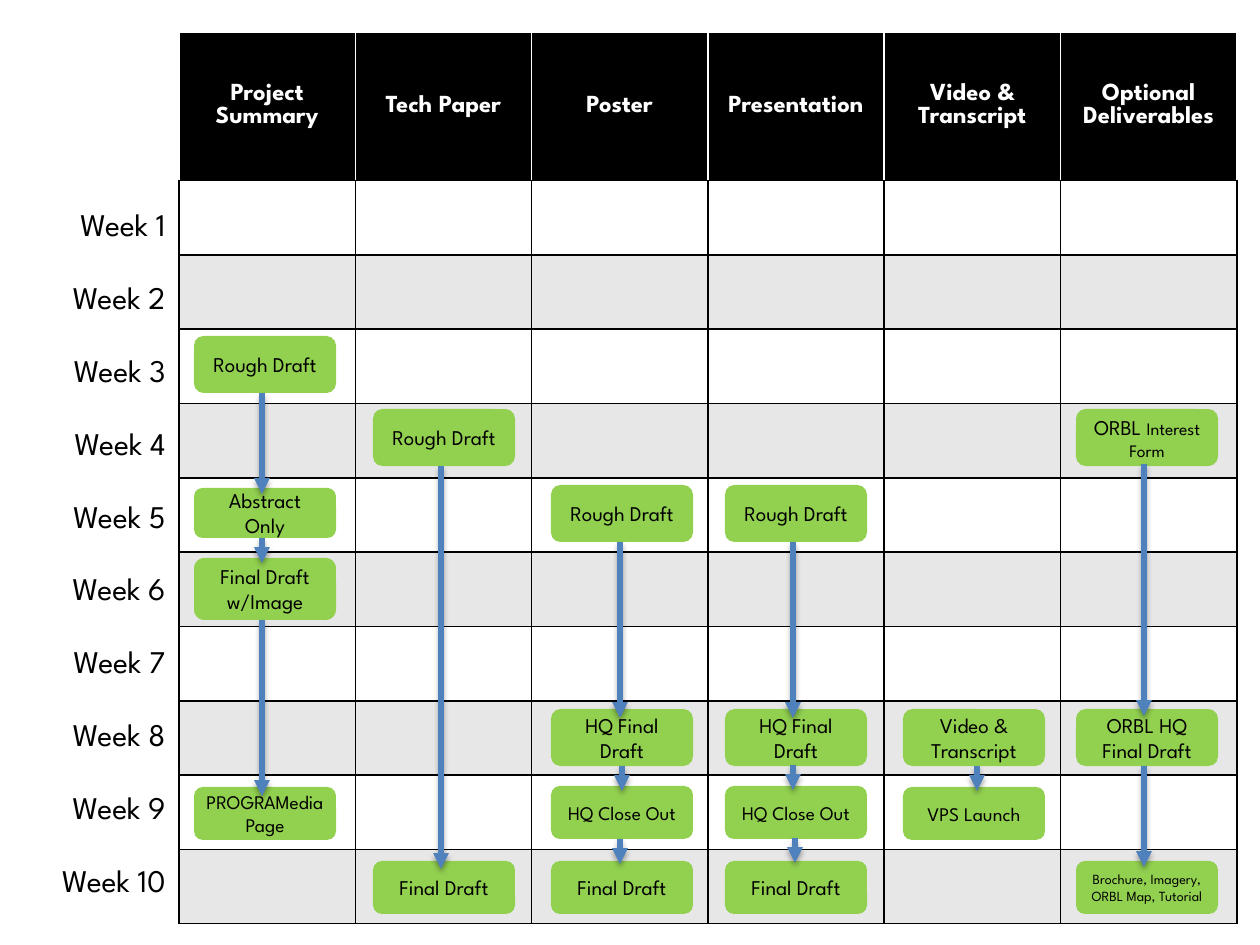
from dataclasses import dataclass
from lxml import etree
from pptx import Presentation
from pptx.dml.color import RGBColor as RGB
from pptx.enum.shapes import MSO_CONNECTOR as CONN, MSO_SHAPE as SHAPE
from pptx.enum.text import MSO_ANCHOR as ANCHOR, MSO_AUTO_SIZE as AUTO, PP_ALIGN as ALIGN
from pptx.oxml import parse_xml
from pptx.oxml.ns import nsdecls, qn
from pptx.util import Emu, Pt

SCALE = 914400 / 126


def px(n):
    return Emu(round(n * SCALE))


@dataclass(frozen=True)
class Theme:
    font: str = "League Spartan"
    black: str = "000000"
    white: str = "FFFFFF"
    band: str = "E7E7E7"
    box: str = "92D050"
    arrow: str = "4F81BD"
    week: int = 18
    head: int = 14
    body: int = 12
    compact: int = 11
    small: int = 10
    tiny: int = 8


class Board:
    def __init__(self, slide, theme):
        self.s = slide
        self.t = theme

    def style(self, font, size, color):
        font.name = self.t.font
        font.size = Pt(size)
        font.color.rgb = RGB.from_string(color)

    def border(self, cell, colors):
        tc_pr = cell._tc.get_or_add_tcPr()
        for i, (side, color) in enumerate(zip("LRTB", colors)):
            tc_pr.insert(i, parse_xml(
                f'<a:ln{side} {nsdecls("a")} w="12700"><a:solidFill>'
                f'<a:srgbClr val="{color}"/></a:solidFill></a:ln{side}>'))

    def grid(self, x, y, w, h, heads, weeks):
        t = self.t
        table = self.s.shapes.add_table(weeks + 1, len(heads), px(x), px(y), px(w), px(h)).table
        for col in table.columns:
            col.width = px(w / len(heads))
        for i, row in enumerate(table.rows):
            row.height = px(h / (weeks + 2) * (1 if i else 2))
            for j, cell in enumerate(row.cells):
                cell.fill.solid()
                if i:
                    cell.fill.fore_color.rgb = RGB.from_string(t.white if i % 2 else t.band)
                    self.border(cell, [t.black] * 4)
                    continue
                cell.fill.fore_color.rgb = RGB.from_string(t.black)
                self.border(cell, [t.white] * 3 + [t.black])
                cell.vertical_anchor = ANCHOR.MIDDLE
                p = cell.text_frame.paragraphs[0]
                p.text = heads[j]
                p.alignment = ALIGN.CENTER
                self.style(p.font, t.head, t.white)
                p.font.bold = True

    def labels(self, x, y, w, h, lines, gap):
        tf = self.s.shapes.add_textbox(px(x), px(y), px(w), px(h)).text_frame
        tf.word_wrap = False
        tf.auto_size = AUTO.SHAPE_TO_FIT_TEXT
        for i, line in enumerate(lines):
            p = tf.add_paragraph() if i else tf.paragraphs[0]
            p.text = line
            p.alignment = ALIGN.RIGHT
            p.space_after = Pt(gap)
            self.style(p.font, self.t.week, self.t.black)

    def box(self, x, y, w, h, *runs):
        sp = self.s.shapes.add_shape(SHAPE.ROUNDED_RECTANGLE, px(x), px(y), px(w), px(h))
        sp.shadow.inherit = False
        sp.fill.solid()
        sp.fill.fore_color.rgb = RGB.from_string(self.t.box)
        sp.line.fill.background()
        tf = sp.text_frame
        tf.word_wrap = True
        tf.vertical_anchor = ANCHOR.MIDDLE
        if runs[0][1] == self.t.compact:
            tf.margin_left = tf.margin_right = 0
        p = tf.paragraphs[0]
        p.alignment = ALIGN.CENTER
        for text, size in runs:
            r = p.add_run()
            r.text = text
            self.style(r.font, size, self.t.black)

    def arrow(self, x, top, bottom):
        c = self.s.shapes.add_connector(CONN.STRAIGHT, px(x), px(top), px(x), px(bottom))
        c.line.color.rgb = RGB.from_string(self.t.arrow)
        c.line.width = Pt(3)
        etree.SubElement(c.line._get_or_add_ln(), qn("a:tailEnd"), type="triangle")
        c._element.spPr.append(parse_xml(
            f'<a:effectLst {nsdecls("a")}><a:outerShdw blurRad="39370" dist="22860" '
            f'dir="5400000" rotWithShape="0"><a:srgbClr val="{self.t.black}">'
            '<a:alpha val="35000"/></a:srgbClr></a:outerShdw></a:effectLst>'))


def main():
    t = Theme()
    prs = Presentation()
    prs.slide_width, prs.slide_height = px(1260), px(945)
    b = Board(prs.slides.add_slide(prs.slide_layouts[6]), t)

    heads = ["Project Summary", "Tech Paper", "Poster", "Presentation",
             "Video & Transcript", "Optional Deliverables"]
    b.grid(179, 32, 1058, 892, heads, 10)
    b.labels(21, 199, 157, 712, [f"Week {n}" for n in range(1, 11)], 20)

    rough, final = ("Rough Draft", t.body), ("Final Draft", t.body)
    review = [
        (485, 57, rough),
        (709, 57, ("HQ Final Draft", t.body)),
        (786, 53, ("HQ Close Out", t.compact)),
        (861, 53, final),
    ]
    steps = {
        194: [
            (336, 57, rough),
            (488, 50, ("Abstract Only", t.body)),
            (558, 62, ("Final Draft w/Image", t.body)),
            (787, 53, ("PROGRAMedia Page", t.compact)),
        ],
        373: [(409, 57, rough), (861, 53, final)],
        551: review,
        725: review,
        903: [
            (709, 57, ("Video & Transcript", t.body)),
            (787, 53, ("VPS Launch", t.compact)),
        ],
        1076: [
            (409, 57, ("ORBL ", t.body), ("Interest Form", t.small)),
            (709, 57, ("ORBL HQ Final Draft", t.body)),
            (861, 53, ("Brochure, Imagery, ORBL Map, Tutorial", t.tiny)),
        ],
    }
    for x, boxes in steps.items():
        for y, h, *runs in boxes:
            b.box(x, y, 142, h, *runs)

    arrows = [
        (262, 393, 494), (262, 538, 563), (262, 620, 796),
        (441, 466, 869),
        (620, 542, 718), (622, 766, 791), (620, 839, 864),
        (793, 542, 718), (793, 765, 790), (795, 838, 863),
        (977, 766, 791),
        (1144, 464, 716), (1144, 766, 867),
    ]
    for x, top, bottom in arrows:
        b.arrow(x, top, bottom)

    prs.save("out.pptx")


if __name__ == "__main__":
    main()
